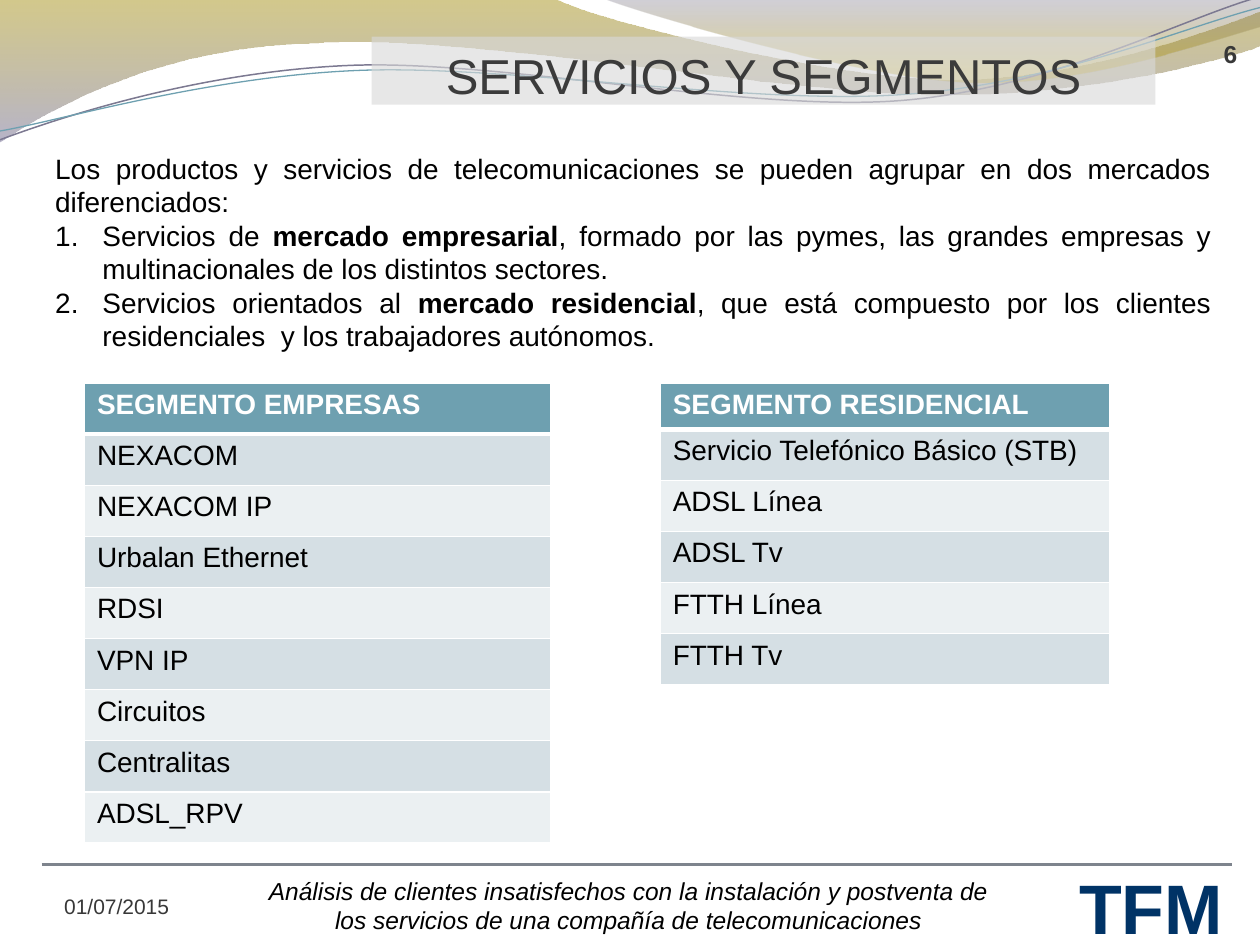
from lxml.etree import SubElement
from pptx import Presentation
from pptx.dml.color import RGBColor
from pptx.enum.shapes import MSO_CONNECTOR as Connector
from pptx.enum.text import MSO_ANCHOR as Anchor, MSO_AUTO_SIZE as AutoSize, PP_ALIGN as Align
from pptx.oxml.ns import qn
from pptx.util import Inches, Pt

# Content
TITLE = "SERVICIOS Y SEGMENTOS"
DATE = "01/07/2015"
PAGE = "6"
FOOTER = ("Análisis de clientes insatisfechos con la instalación y postventa de "
          "los servicios de una compañía de telecomunicaciones")
INTRO = ("Los productos y servicios de telecomunicaciones se pueden agrupar "
         "en dos mercados diferenciados:")
MARKETS = [  # before, bold, after
    ("Servicios de ", "mercado empresarial",
     ", formado por las pymes, las grandes empresas y multinacionales de los distintos sectores."),
    ("Servicios orientados al ", "mercado residencial",
     ", que está compuesto por los clientes residenciales  y los trabajadores autónomos."),
]
ROW_HEIGHT = 3.65 / 9
TABLES = [  # left, width, header height, rows
    (0.67, 3.7, ROW_HEIGHT, ["SEGMENTO EMPRESAS", "NEXACOM", "NEXACOM IP", "Urbalan Ethernet",
                             "RDSI", "VPN IP", "Circuitos", "Centralitas", "ADSL_RPV"]),
    (5.24, 3.57, 0.34, ["SEGMENTO RESIDENCIAL", "Servicio Telefónico Básico (STB)",
                        "ADSL Línea", "ADSL Tv", "FTTH Línea", "FTTH Tv"]),
]
TABLE_TOP = 3.04
HEADER_FILL, BAND_FILLS = "6EA0B0", ("D5DFE4", "EBF0F2")

# Header waves: each step is an end point (line) or two controls and an end point (curve)
BANDS = [  # start, steps, gradient stops (position, colour, opacity)
    ((0, 0), [(4.4, -0.01), (4.76, 0.17, 6.64, 0.63, 7.58, 0.63),
              (8.53, 0.63, 9.58, 0.26, 10, 0.09), (10.01, 0.36),
              (9.83, 0.44, 8.7, 0.76, 7.46, 0.75), (6.22, 0.75, 3.82, 0.28, 2.57, 0.34),
              (1.29, 0.36, 0.46, 0.83, -0.01, 1.13)],
     [(0, "9E8700", 45), (1, "7B769C", 55)]),
    ((4.79, -0.01), [(5.09, 0.11, 6.82, 0.62, 7.69, 0.65),
                     (8.56, 0.69, 9.61, 0.32, 10, 0.21), (10, 0)],
     [(0, "66627C", 30), (0.8, "BDA100", 45)]),
]
WAVES = [  # start, steps, colour, width
    ((0, 1.11), [(0.48, 0.93, 1.58, 0.57, 2.77, 0.52), (3.95, 0.47, 5.93, 0.89, 7.13, 0.8),
                 (8.33, 0.71, 9.38, 0.15, 9.98, -0.02)], "7C7991", 0.85),
    ((0, 1.04), [(0.47, 0.96, 1.64, 0.61, 2.83, 0.56), (4.03, 0.51, 5.97, 0.84, 7.17, 0.75),
                 (8.36, 0.67, 9.41, 0.21, 10, 0.06)], "6EA0B0", 0.75),
]


def color(hex_value):
    return RGBColor.from_string(hex_value)


def set_opacity(shape, *percents):
    for element, percent in zip(shape._element.spPr.iter(qn("a:srgbClr")), percents):
        SubElement(element, qn("a:alpha"), val=str(percent * 1000))


def add_curve(slide, start, steps, close):
    points = [(Inches(x), Inches(y)) for step in steps for x, y in zip(step[::2], step[1::2])]
    builder = slide.shapes.build_freeform(Inches(start[0]), Inches(start[1]))
    builder.add_line_segments(points, close=close)
    shape = builder.convert_to_shape()
    shape.shadow.inherit = False
    # Join the three segments of each curved step into one Bezier segment
    segments = iter(list(shape._element.spPr.iter(qn("a:lnTo"))))
    for step in steps:
        first = next(segments)
        if len(step) == 6:
            first.tag = qn("a:cubicBezTo")
            for _ in range(2):
                segment = next(segments)
                first.append(segment[0])
                segment.getparent().remove(segment)
    return shape


def add_run(paragraph, text, size, hex_value="000000", bold=False, italic=False):
    run = paragraph.add_run()
    run.text = text
    font = run.font
    font.name, font.size, font.bold, font.italic = "Arial", Pt(size), bold, italic
    font.color.rgb = color(hex_value)


def add_box(slide, left, top, width, height, anchor=Anchor.TOP, inset=True, wrap=True):
    box = slide.shapes.add_textbox(Inches(left), Inches(top), Inches(width), Inches(height))
    frame = box.text_frame
    frame.word_wrap, frame.vertical_anchor = wrap, anchor
    if not inset:
        frame.margin_left = frame.margin_right = frame.margin_top = frame.margin_bottom = 0
    return frame


def add_label(slide, place, text, size, align, hex_value="000000", bold=False, italic=False,
              **box_options):
    paragraph = add_box(slide, *place, **box_options).paragraphs[0]
    paragraph.alignment = align
    add_run(paragraph, text, size, hex_value, bold, italic)


def number_paragraph(paragraph, indent):
    properties = paragraph._p.get_or_add_pPr()
    properties.set("marL", str(indent))
    properties.set("indent", str(-indent))
    SubElement(properties, qn("a:buFont"), typeface="+mj-lt")
    SubElement(properties, qn("a:buAutoNum"), type="arabicPeriod")


def set_borders(cell, **widths):
    properties = cell._tc.get_or_add_tcPr()
    for side in "LRTB":
        line = SubElement(properties, qn(f"a:ln{side}"), w=str(Pt(widths.get(side, 1))))
        SubElement(SubElement(line, qn("a:solidFill")), qn("a:srgbClr"), val="FFFFFF")


def add_segment_table(slide, left, width, header_height, rows):
    height = header_height + ROW_HEIGHT * (len(rows) - 1)
    table = slide.shapes.add_table(len(rows), 1, Inches(left), Inches(TABLE_TOP),
                                   Inches(width), Inches(height)).table
    for index, text in enumerate(rows):
        header = index == 0
        table.rows[index].height = Inches(header_height if header else ROW_HEIGHT)
        cell = table.cell(index, 0)
        set_borders(cell, T=3 if index == 1 else 1, B=3 if header else 1)
        cell.fill.solid()
        cell.fill.fore_color.rgb = color(HEADER_FILL if header else BAND_FILLS[(index - 1) % 2])
        add_run(cell.text_frame.paragraphs[0], text, 16, "FFFFFF" if header else "000000", header)


def main():
    presentation = Presentation()
    presentation.slide_width, presentation.slide_height = Inches(10), Inches(7.5)
    slide = presentation.slides.add_slide(presentation.slide_layouts[5])

    # Header waves
    for start, steps, stops in BANDS:
        band = add_curve(slide, start, steps, close=True)
        band.line.fill.background()
        band.fill.gradient()
        band.fill.gradient_angle = 270
        for stop, (position, hex_value, _) in zip(band.fill.gradient_stops, stops):
            stop.position = position
            stop.color.rgb = color(hex_value)
        set_opacity(band, *(opacity for _, _, opacity in stops))
    for start, steps, hex_value, width in WAVES:
        wave = add_curve(slide, start, steps, close=False)
        wave.fill.background()
        wave.line.color.rgb = color(hex_value)
        wave.line.width = Pt(width)

    # Footer
    add_label(slide, (8.46, 6.81, 1.35, 0.67), "TFM", 40, Align.CENTER, "003366", bold=True,
              wrap=False)
    add_label(slide, (1.96, 6.9, 6.06, 0.57), FOOTER, 14, Align.CENTER, italic=True)
    rule = slide.shapes.add_connector(Connector.STRAIGHT, Inches(0.33), Inches(6.86),
                                      Inches(9.78), Inches(6.86))
    rule.line.color.rgb = color("7E848D")
    rule.line.width = Pt(2)
    SubElement(rule._element.spPr, qn("a:effectLst"))

    # Title, placed above the waves
    title = slide.shapes.title
    slide.shapes._spTree.append(title._element)
    title.left, title.top, title.width, title.height = map(Inches, (2.95, 0.29, 6.22, 0.54))
    title.fill.solid()
    title.fill.fore_color.rgb = color("D9D9D9")
    set_opacity(title, 63)
    frame = title.text_frame
    frame.auto_size, frame.vertical_anchor = AutoSize.NONE, Anchor.BOTTOM
    frame.margin_left = frame.margin_right = frame.margin_bottom = 0
    frame.margin_top = Inches(0.05)
    frame.paragraphs[0].alignment = Align.CENTER
    add_run(frame.paragraphs[0], TITLE, 28, "3B3B3B")

    # Date and page number
    add_label(slide, (0.51, 6.89, 1.27, 0.4), DATE, 12, Align.LEFT, "383838",
              anchor=Anchor.BOTTOM, inset=False)
    add_label(slide, (8.99, 0.14, 0.83, 0.4), PAGE, 14, Align.RIGHT, "383838", bold=True,
              anchor=Anchor.BOTTOM, inset=False)

    # Introduction and numbered markets
    frame = add_box(slide, 0.34, 1.15, 9.37, 1.72)
    frame.paragraphs[0].alignment = Align.JUSTIFY
    add_run(frame.paragraphs[0], INTRO, 16)
    for before, market, after in MARKETS:
        paragraph = frame.add_paragraph()
        paragraph.alignment = Align.JUSTIFY
        number_paragraph(paragraph, Pt(27))
        add_run(paragraph, before, 16)
        add_run(paragraph, market, 16, bold=True)
        add_run(paragraph, after, 16)

    # Segment tables
    for left, width, header_height, rows in TABLES:
        add_segment_table(slide, left, width, header_height, rows)

    presentation.save("out.pptx")


if __name__ == "__main__":
    main()
